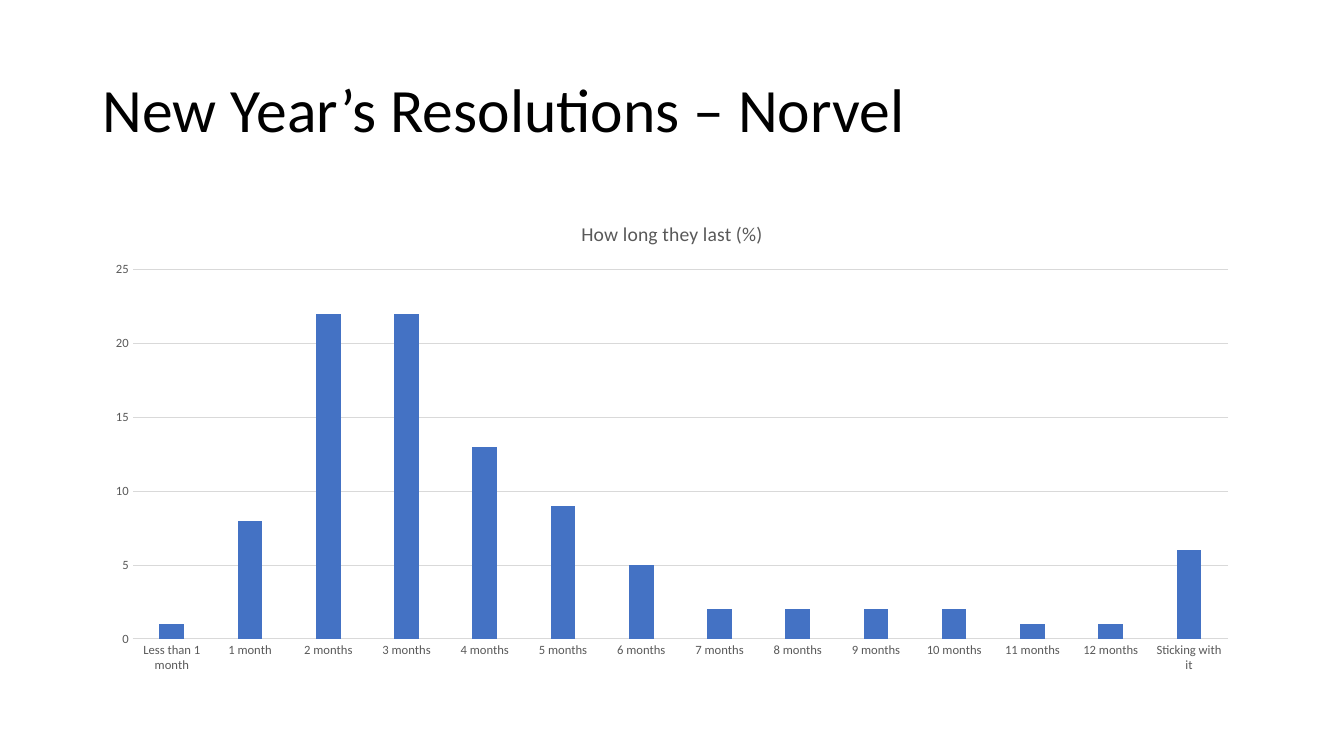
"""Build a slide with a column chart of how long New Year's resolutions last."""
from typing import NamedTuple

from pptx import Presentation
from pptx.chart.axis import _BaseAxis as Axis
from pptx.chart.chart import Chart
from pptx.chart.data import CategoryChartData
from pptx.dml.color import RGBColor
from pptx.enum.chart import XL_CHART_TYPE as ChartType, XL_TICK_MARK as TickMark
from pptx.enum.text import MSO_ANCHOR as Anchor, PP_ALIGN as Align
from pptx.slide import Slide
from pptx.text.text import Font
from pptx.util import Inches, Pt

COLORS = {"title": "000000", "label": "595959", "line": "D9D9D9", "bar": "4472C4"}
FONT = "Calibri"
WIDTH, HEIGHT = Inches(13.33), Inches(7.5)


class Box(NamedTuple):
    """A frame given as shares of the slide's width and height."""
    left: float
    top: float
    width: float
    height: float

    def lengths(self) -> tuple[int, int, int, int]:
        """Return the frame in slide units."""
        return (int(self.left * WIDTH), int(self.top * HEIGHT),
                int(self.width * WIDTH), int(self.height * HEIGHT))


class Duration(NamedTuple):
    """How long a resolution lasts and the share of people, in percent."""
    label: str
    percent: int


MONTHLY_PERCENTS = (8, 22, 22, 13, 9, 5, 2, 2, 2, 2, 1, 1)
DURATIONS = [
    Duration("Less than 1 month", 1),
    *(Duration(f"{month} month{'s' if month > 1 else ''}", percent)
      for month, percent in enumerate(MONTHLY_PERCENTS, start=1)),
    Duration("Sticking with it", 6),
]
MARGIN = 0.069
CONTENT_WIDTH = 1 - 2 * MARGIN
TITLE_BOX = Box(MARGIN, 0.053, CONTENT_WIDTH, 0.193)
CHART_BOX = Box(MARGIN, 0.267, CONTENT_WIDTH, 0.635)


def color(name: str) -> RGBColor:
    """Look up a named color."""
    return RGBColor.from_string(COLORS[name])


def format_font(font: Font, size: float, color_name: str) -> None:
    """Set the face, size and color of a font."""
    font.name = FONT
    font.size = Pt(size)
    font.bold = False
    font.color.rgb = color(color_name)


def add_title(slide: Slide, text: str) -> None:
    """Place and format the title placeholder."""
    title = slide.shapes.title
    title.left, title.top, title.width, title.height = TITLE_BOX.lengths()
    frame = title.text_frame
    frame.text = text
    frame.word_wrap = True
    frame.vertical_anchor = Anchor.MIDDLE
    paragraph = frame.paragraphs[0]
    paragraph.alignment = Align.LEFT
    paragraph.line_spacing = 0.9
    format_font(paragraph.runs[0].font, 44, "title")


def format_axis(axis: Axis) -> None:
    """Give an axis small gray labels and no tick marks."""
    axis.major_tick_mark = TickMark.NONE
    axis.minor_tick_mark = TickMark.NONE
    format_font(axis.tick_labels.font, 9, "label")


def format_axes(chart: Chart) -> None:
    """Format both axes and the gridlines."""
    category_axis, value_axis = chart.category_axis, chart.value_axis
    for axis in (category_axis, value_axis):
        format_axis(axis)
    value_axis.minimum_scale, value_axis.maximum_scale = 0, 25
    value_axis.major_unit = 5
    value_axis.has_major_gridlines = True
    value_axis.format.line.fill.background()
    for line in (category_axis.format.line, value_axis.major_gridlines.format.line):
        line.color.rgb = color("line")
        line.width = Pt(0.75)


def add_duration_chart(slide: Slide, title: str) -> None:
    """Add the column chart of durations."""
    data = CategoryChartData()
    data.categories = [duration.label for duration in DURATIONS]
    data.add_series("Series 1", [duration.percent for duration in DURATIONS])
    chart = slide.shapes.add_chart(
        ChartType.COLUMN_CLUSTERED, *CHART_BOX.lengths(), data).chart
    format_font(chart.font, 10, "title")
    chart.has_legend = False
    chart.has_title = True
    title_paragraph = chart.chart_title.text_frame.paragraphs[0]
    title_paragraph.text = title
    format_font(title_paragraph.runs[0].font, 14, "label")
    chart.chart_title.include_in_layout = False
    format_axes(chart)
    plot = chart.plots[0]
    plot.gap_width, plot.overlap = 219, -27
    plot.vary_by_categories = False
    fill = plot.series[0].format.fill
    fill.solid()
    fill.fore_color.rgb = color("bar")


def main() -> None:
    """Create and save the presentation."""
    presentation = Presentation()
    presentation.slide_width, presentation.slide_height = WIDTH, HEIGHT
    slide = presentation.slides.add_slide(presentation.slide_layouts[5])
    add_title(slide, "New Year’s Resolutions – Norvel")
    add_duration_chart(slide, "How long they last (%)")
    presentation.save("out.pptx")


if __name__ == "__main__":
    main()
